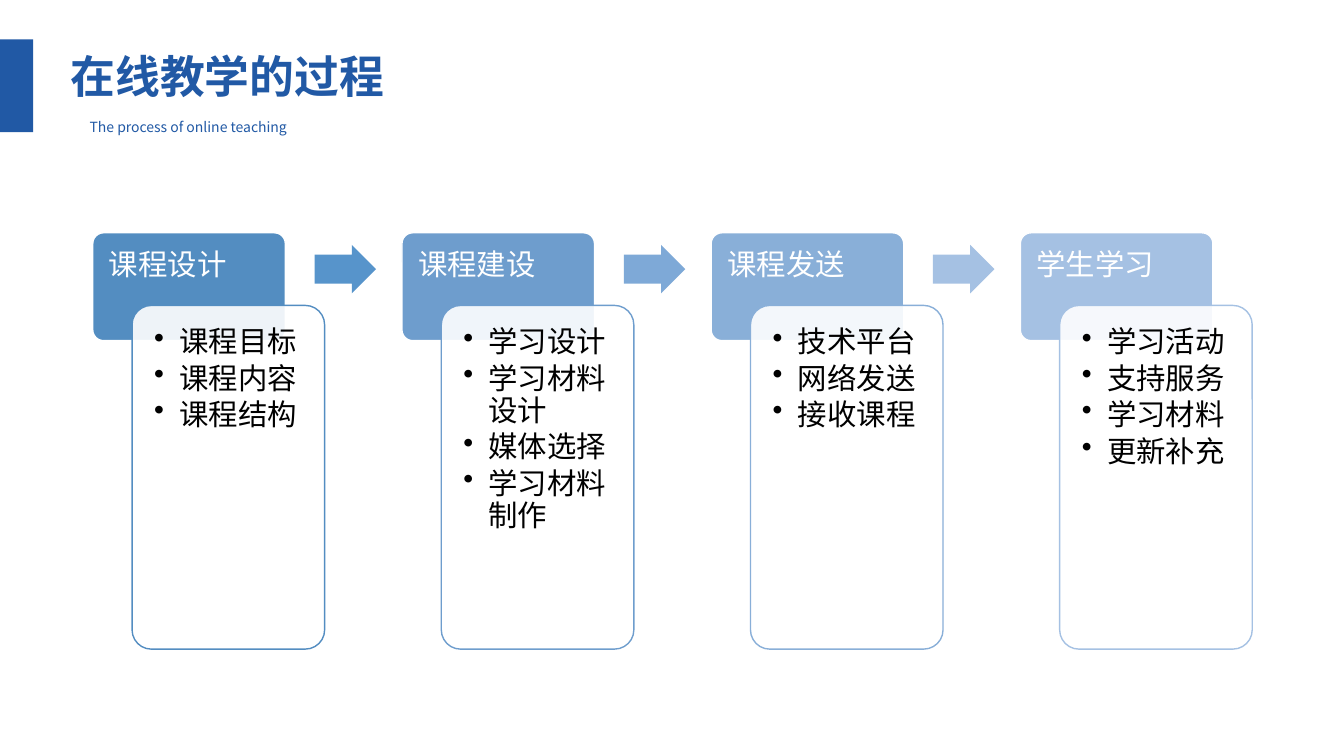
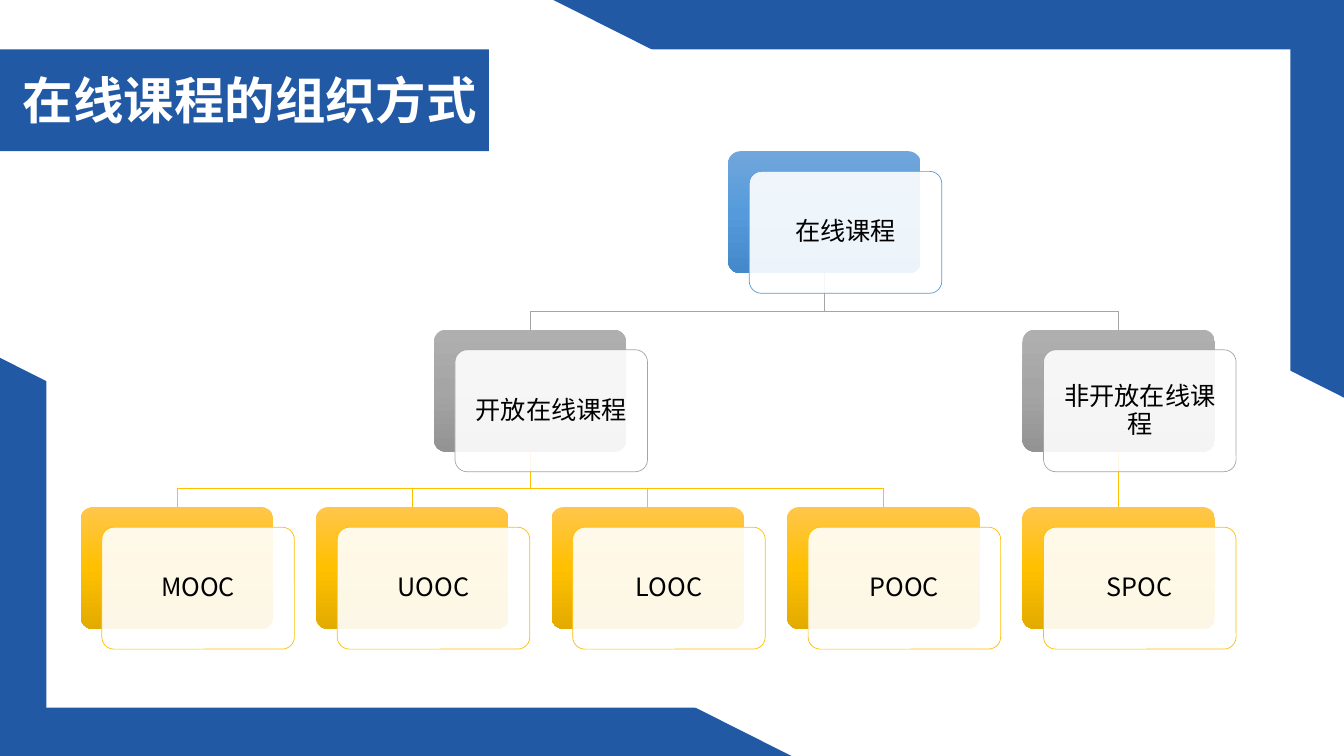
import pptx
import pptx.dml.color
import pptx.enum.shapes
import pptx.enum.text
import pptx.oxml.ns
import pptx.util
from lxml import etree

Inches = pptx.util.Inches
Pt = pptx.util.Pt
SHAPE = pptx.enum.shapes.MSO_SHAPE
ALIGN = pptx.enum.text.PP_ALIGN
ANCHOR = pptx.enum.text.MSO_ANCHOR
qn = pptx.oxml.ns.qn

FONT = "Noto Sans CJK SC"
COLORS = {
    "brand": "2159A5", "white": "FFFFFF", "black": "000000",
    "root_line": "5B9BD5", "group_line": "A5A5A5", "course_line": "FFC000",
}
GRADIENTS = {
    "root": ("71A6DB", "559BDB", "448ACA"),
    "group": ("AFAFAF", "A5A5A5", "939393"),
    "course": ("FFC64B", "FFC000", "E3AB00"),
}

# Teaching process: step, card colour, colour of the arrow that follows, items
STEPS = [
    ("课程设计", "538DC1", "5794CB", ["课程目标", "课程内容", "课程结构"]),
    ("课程建设", "6E9DCD", "7EA9D7",
     ["学习设计", "学习材料设计", "媒体选择", "学习材料制作"]),
    ("课程发送", "89AFD8", "A5C1E3", ["技术平台", "网络发送", "接收课程"]),
    ("学生学习", "A5C1E3", None, ["学习活动", "支持服务", "学习材料", "更新补充"]),
]
STEP_LEFT, STEP_PITCH = 0.92, 9.2 / 3

# Course tree: each group with its courses
ROOT = "在线课程"
GROUPS = [
    ("开放在线课程", ["MOOC", "UOOC", "LOOC", "POOC"]),
    ("非开放在线课程", ["SPOC"]),
]
NODE_W, NODE_H, NODE_SHIFT = 1.91, 1.21, 0.2
TREE_LEFT, COLUMN_PITCH = 0.8, 9.34 / 4
LEVEL_TOPS = {"root": 1.5, "group": 3.27, "course": 5.03}


def rgb(color):
    return pptx.dml.color.RGBColor.from_string(COLORS.get(color, color))


def add_block(slide, kind, box, fill, line=None, line_width=1, alpha=None, adjust=()):
    """Preset shape with a plain fill; alpha is opacity in percent."""
    block = slide.shapes.add_shape(kind, *map(Inches, box))
    block.shadow.inherit = False
    for index, value in enumerate(adjust):
        block.adjustments[index] = value
    block.fill.solid()
    block.fill.fore_color.rgb = rgb(fill)
    if alpha is not None:
        color = block._element.spPr.find(qn("a:solidFill"))[0]
        etree.SubElement(color, qn("a:alpha"), val=str(alpha * 1000))
    if line:
        block.line.color.rgb = rgb(line)
        block.line.width = Pt(line_width)
    else:
        block.line.fill.background()
    return block


def set_gradient(block, colors):
    """Even vertical gradient from top to bottom."""
    block.fill.gradient()
    block.fill.gradient_angle = 270
    stops = block._element.spPr.find(qn("a:gradFill")).find(qn("a:gsLst"))
    stops.clear()
    for index, color in enumerate(colors):
        position = 100000 * index // (len(colors) - 1)
        stop = etree.SubElement(stops, qn("a:gs"), pos=str(position))
        etree.SubElement(stop, qn("a:srgbClr"), val=color)


def add_bullet(paragraph):
    properties = paragraph._p.get_or_add_pPr()
    properties.set("marL", str(Inches(0.25)))
    properties.set("indent", str(-Inches(0.25)))
    etree.SubElement(properties, qn("a:buChar"), char="•")


def add_text(slide, box, lines, size, color, bold=False, align=ALIGN.LEFT,
             insets=(0.1, 0.05, 0.1, 0.05), anchor=ANCHOR.TOP,
             spacing=1.0, after=0, bullets=False):
    """Text box with one paragraph a line; after is in points."""
    frame = slide.shapes.add_textbox(*map(Inches, box)).text_frame
    frame.word_wrap = True
    frame.vertical_anchor = anchor
    (frame.margin_left, frame.margin_top,
     frame.margin_right, frame.margin_bottom) = map(Inches, insets)
    frame.text = "\n".join(lines)
    for paragraph in frame.paragraphs:
        paragraph.alignment = align
        paragraph.line_spacing = spacing
        paragraph.space_after = Pt(after)
        if bullets:
            add_bullet(paragraph)
        for run in paragraph.runs:
            run.font.name = FONT
            run.font.size = Pt(size)
            run.font.bold = bold
            run.font.color.rgb = rgb(color)
            etree.SubElement(run._r.get_or_add_rPr(), qn("a:ea"), typeface=FONT)


def add_title(slide, band, box, title, size, color):
    """Blue band at the left edge with the bold slide title."""
    add_block(slide, SHAPE.RECTANGLE, band, "brand")
    add_text(slide, box, [title], size, color, bold=True)


def add_step(slide, left, name, color, arrow, items):
    """Coloured heading card, item card over it, arrow to the next step."""
    add_block(slide, SHAPE.ROUNDED_RECTANGLE, (left, 2.31, 1.91, 1.07), color,
              line="white", adjust=[0.1])
    add_text(slide, (left, 2.31, 1.91, 0.72), [name], 21, "white",
             insets=(0.16, 0.16, 0.16, 0.09), spacing=Pt(23))
    add_block(slide, SHAPE.ROUNDED_RECTANGLE, (left + 0.39, 3.03, 1.91, 3.41), "white",
              line=color, alpha=90, adjust=[0.1])
    add_text(slide, (left + 0.45, 3.08, 1.8, 3.3), items, 21, "black",
             insets=(0.16,) * 4, spacing=Pt(23), after=3, bullets=True)
    if arrow:
        add_block(slide, SHAPE.RIGHT_ARROW, (left + 2.2, 2.43, 0.61, 0.48), arrow,
                  adjust=[0.6, 0.5])


def add_node(slide, left, level, name):
    """Gradient card with a translucent label card shifted over it."""
    top = LEVEL_TOPS[level]
    card = add_block(slide, SHAPE.ROUNDED_RECTANGLE, (left, top, NODE_W, NODE_H),
                     level + "_line", adjust=[0.1])
    set_gradient(card, GRADIENTS[level])
    label = (left + 0.21, top + NODE_SHIFT, NODE_W, NODE_H)
    add_block(slide, SHAPE.ROUNDED_RECTANGLE, label, "white", line=level + "_line",
              line_width=0.5, alpha=90, adjust=[0.1])
    add_text(slide, label, [name], 18, "black", align=ALIGN.CENTER,
             insets=(0.11,) * 4, anchor=ANCHOR.MIDDLE, spacing=Pt(19.5))


def add_branch(slide, parent_left, parent_level, child_left, child_level):
    """Line from the parent's bottom centre to the child's top centre."""
    start_x, end_x = parent_left + NODE_W / 2, child_left + NODE_W / 2
    start_y, end_y = LEVEL_TOPS[parent_level] + NODE_H, LEVEL_TOPS[child_level]
    if start_x == end_x:
        branch = slide.shapes.add_connector(
            pptx.enum.shapes.MSO_CONNECTOR.STRAIGHT,
            *map(Inches, (start_x, start_y, end_x, end_y)))
        etree.SubElement(branch._element.spPr, qn("a:effectLst"))
    else:
        bend_y = end_y - 0.18
        points = [(start_x, bend_y), (end_x, bend_y), (end_x, end_y)]
        outline = slide.shapes.build_freeform(Inches(start_x), Inches(start_y))
        outline.add_line_segments([tuple(map(Inches, p)) for p in points], close=False)
        branch = outline.convert_to_shape()
        branch.shadow.inherit = False
        branch.fill.background()
    branch.line.color.rgb = rgb(child_level + "_line")
    branch.line.width = Pt(0.5)


def build_process_slide(slide):
    add_title(slide, (-0.02, 0.39, 0.35, 0.92), (0.6, 0.43, 5.21, 0.64),
              "在线教学的过程", 32, "brand")
    add_text(slide, (0.79, 0.96, 3.05, 0.39), ["The process of online teaching"],
             10, "brand", align=ALIGN.JUSTIFY, spacing=2.0)
    for index, step in enumerate(STEPS):
        add_step(slide, STEP_LEFT + index * STEP_PITCH, *step)


def build_tree_slide(slide):
    # Corner triangles under a white panel
    upper = add_block(slide, SHAPE.RIGHT_TRIANGLE, (5.41, -0.04, 7.95, 4), "brand")
    upper.rotation = 180
    add_block(slide, SHAPE.RIGHT_TRIANGLE, (-0.02, 3.54, 7.95, 4), "brand")
    add_block(slide, SHAPE.RECTANGLE, (0.46, 0.49, 12.34, 6.53), "white")
    add_title(slide, (-0.02, 0.49, 4.87, 1.01), (0.13, 0.64, 4.73, 0.71),
              "在线课程的组织方式", 36, "white")

    # Every parent stands midway between its first and last child
    nodes, branches, group_lefts = [], [], []
    column = 0
    for group, courses in GROUPS:
        lefts = [TREE_LEFT + (column + i) * COLUMN_PITCH for i in range(len(courses))]
        column += len(courses)
        group_left = (lefts[0] + lefts[-1]) / 2
        group_lefts.append(group_left)
        nodes.append((group_left, "group", group))
        for left, course in zip(lefts, courses):
            nodes.append((left, "course", course))
            branches.append((group_left, "group", left, "course"))
    root_left = (group_lefts[0] + group_lefts[-1]) / 2
    nodes.append((root_left, "root", ROOT))
    branches += [(root_left, "root", left, "group") for left in group_lefts]

    # Lines lie behind the cards
    for branch in branches:
        add_branch(slide, *branch)
    for node in nodes:
        add_node(slide, *node)


def main():
    deck = pptx.Presentation()
    deck.slide_width, deck.slide_height = Inches(13.33), Inches(7.5)
    for build in (build_process_slide, build_tree_slide):
        build(deck.slides.add_slide(deck.slide_layouts[6]))
    deck.save("out.pptx")


if __name__ == "__main__":
    main()
